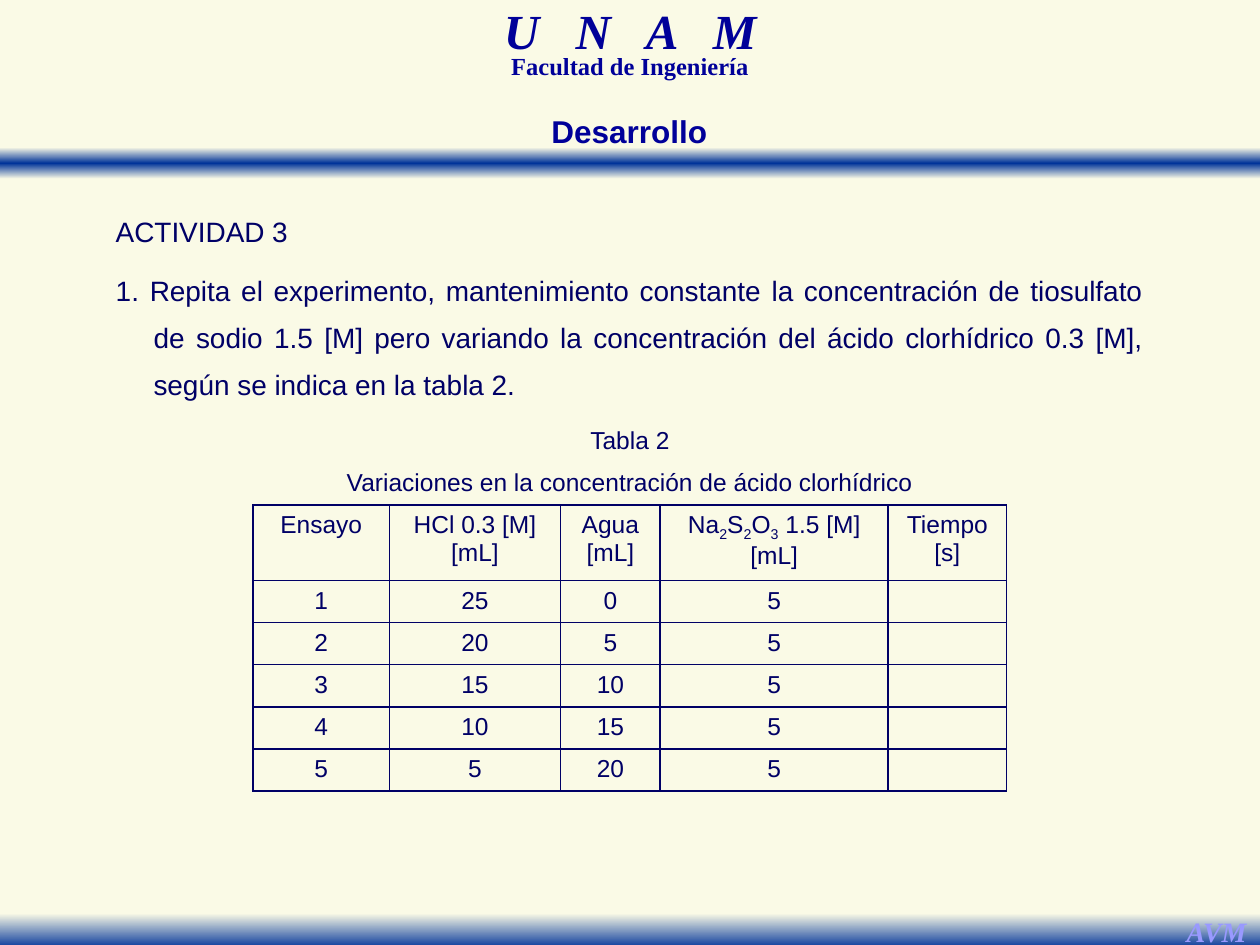
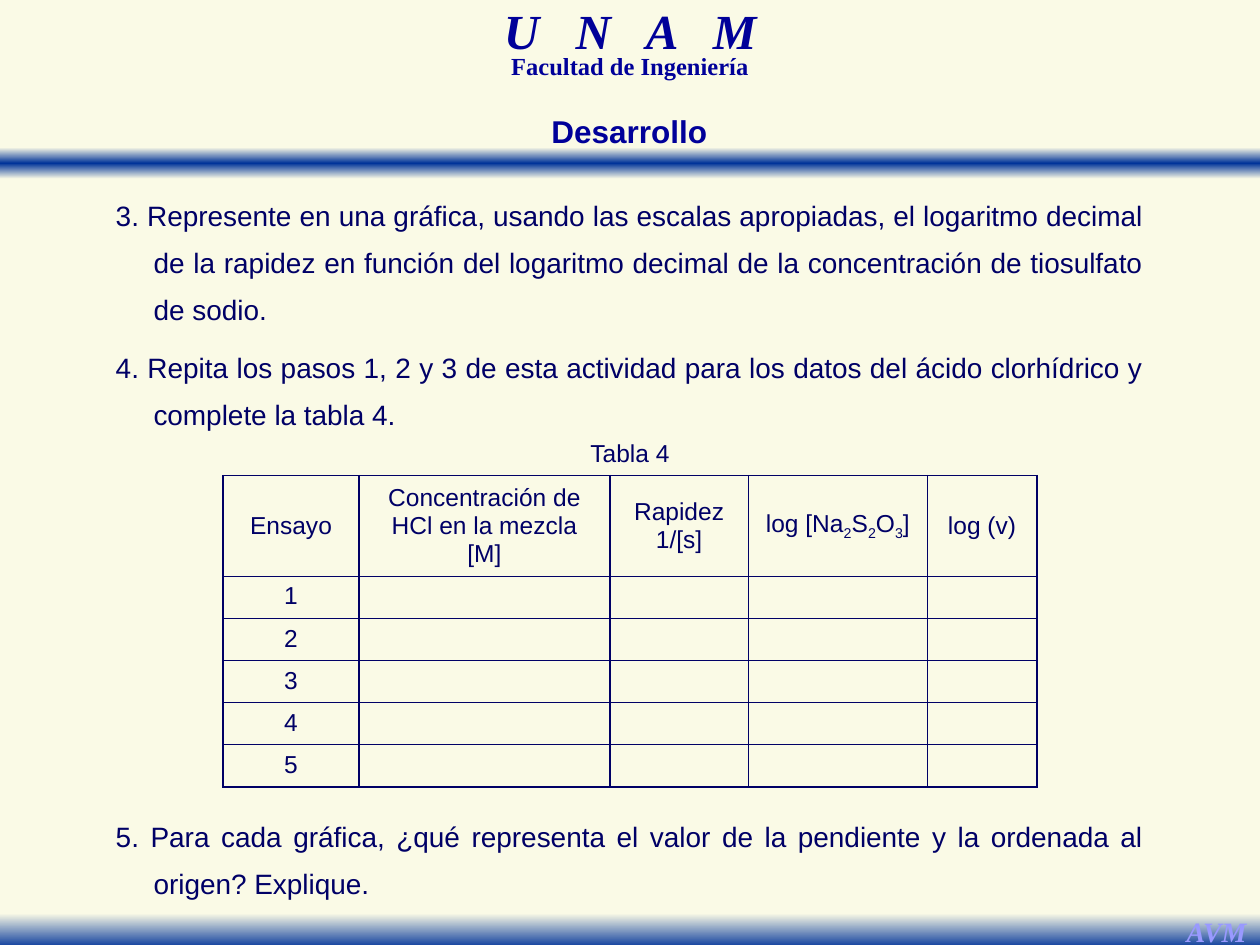
"""Build two slides of a chemistry lab guide on reaction rates."""

from dataclasses import dataclass

from lxml.etree import SubElement
from pptx import Presentation
from pptx.dml.color import RGBColor
from pptx.enum.shapes import MSO_SHAPE
from pptx.enum.text import MSO_ANCHOR, MSO_AUTO_SIZE, PP_ALIGN
from pptx.oxml.ns import qn
from pptx.util import Pt

EMU_PER_PX = 9144


@dataclass(frozen=True)
class Theme:
    cream: str = "FAFAE6"
    band: str = "003399"
    heading: str = "000099"
    ink: str = "000066"
    signature: str = "9999FF"
    sans: str = "Arial"
    serif: str = "Times New Roman"
    school_size: int = 28
    title_size: int = 18
    body_size: int = 16
    small_size: int = 14
    border: int = 1


THEME = Theme()


@dataclass(frozen=True)
class Box:
    left: int
    top: int
    width: int
    height: int

    def emu(self) -> tuple:
        return tuple(px(n) for n in (self.left, self.top, self.width, self.height))


@dataclass(frozen=True)
class TextStyle:
    size: int
    color: str
    font: str = THEME.sans
    bold: bool = False
    italic: bool = False
    align: PP_ALIGN = PP_ALIGN.CENTER
    line_spacing: float = 1.0
    space_after: float = 0


@dataclass(frozen=True)
class Label:
    box: Box
    text: str
    style: TextStyle
    wrap: bool = True
    tracking: int = 0


@dataclass(frozen=True)
class Band:
    box: Box
    stops: tuple


@dataclass(frozen=True)
class Steps:
    box: Box
    items: tuple


@dataclass(frozen=True)
class TrialTable:
    left: int
    top: int
    widths: tuple
    captions: tuple
    headers: tuple
    trials: tuple
    header_height: int
    header_anchor: MSO_ANCHOR
    row_height: int = 33


BODY = TextStyle(THEME.body_size, THEME.ink, align=PP_ALIGN.JUSTIFY,
                 line_spacing=1.4, space_after=6.4)
CELL = TextStyle(THEME.small_size, THEME.ink)
HANGING = 30

BANDS = (
    Band(Box(0, 117, 1000, 25),
         ((0, THEME.cream), (50, THEME.band), (100, THEME.cream))),
    Band(Box(0, 725, 1000, 28), ((0, THEME.cream), (100, THEME.band))),
)
LABELS = (
    Label(Box(304, 8, 392, 43), "U N A M",
          TextStyle(THEME.school_size, THEME.heading, THEME.serif, True, True,
                    line_spacing=0.7), tracking=700),
    Label(Box(321, 42, 358, 26), "Facultad de Ingeniería",
          TextStyle(THEME.small_size, THEME.heading, THEME.serif, True,
                    line_spacing=0.7)),
    Label(Box(931, 721, 69, 37), "AVM",
          TextStyle(THEME.body_size, THEME.signature, THEME.serif, True, True),
          wrap=False),
    Label(Box(283, 84, 433, 40), "Desarrollo",
          TextStyle(THEME.title_size, THEME.heading, bold=True)),
)

SLIDES = (
    (
        Steps(Box(82, 155, 835, 172), (
            "ACTIVIDAD 3",
            "1. Repita el experimento, mantenimiento constante la concentración "
            "de tiosulfato de sodio 1.5 [M] pero variando la concentración del "
            "ácido clorhídrico 0.3 [M], según se indica en la tabla 2.",
        )),
        TrialTable(
            201, 334, (108, 136, 79, 181, 94),
            ("Tabla 2", "Variaciones en la concentración de ácido clorhídrico"),
            ("Ensayo", "HCl 0.3 [M]\n[mL]", "Agua\n[mL]",
             "Na_2S_2O_3 1.5 [M]\n[mL]", "Tiempo\n[s]"),
            tuple((str(n), str(30 - 5 * n), str(5 * n - 5), "5", "")
                  for n in range(1, 6)),
            60, MSO_ANCHOR.TOP),
    ),
    (
        Steps(Box(82, 142, 835, 205), (
            "3. Represente en una gráfica, usando las escalas apropiadas, el "
            "logaritmo decimal de la rapidez en función del logaritmo decimal "
            "de la concentración de tiosulfato de sodio.",
            "4. Repita los pasos 1, 2 y 3 de esta actividad para los datos del "
            "ácido clorhídrico y complete la tabla 4.",
        )),
        TrialTable(
            177, 344, (108, 199, 110, 142, 87), ("Tabla 4",),
            ("Ensayo", "Concentración de HCl en la mezcla\n[M]",
             "Rapidez\n1/[s]", "log [Na_2S_2O_3]", "log (v)"),
            tuple((str(n), "", "", "", "") for n in range(1, 6)),
            80, MSO_ANCHOR.MIDDLE),
        Steps(Box(82, 635, 835, 81), (
            "5. Para cada gráfica, ¿qué representa el valor de la pendiente y "
            "la ordenada al origen? Explique.",
        )),
    ),
)


def px(length: int) -> int:
    """Turn px into EMU."""
    return length * EMU_PER_PX


def add_color(parent, color: str) -> None:
    """Append an RGB colour element."""
    SubElement(parent, qn("a:srgbClr"), val=color)


def style_paragraph(paragraph, style: TextStyle) -> None:
    """Apply a text style to a whole paragraph."""
    paragraph.alignment = style.align
    paragraph.line_spacing = style.line_spacing
    paragraph.space_after = Pt(style.space_after)
    font = paragraph.font
    font.name, font.size = style.font, Pt(style.size)
    font.bold, font.italic = style.bold, style.italic
    font.color.rgb = RGBColor.from_string(style.color)


def add_text_frame(slide, box: Box, wrap: bool = True):
    """Add a text box that fits its text and return its frame."""
    frame = slide.shapes.add_textbox(*box.emu()).text_frame
    frame.word_wrap = wrap
    frame.auto_size = MSO_AUTO_SIZE.SHAPE_TO_FIT_TEXT
    return frame


def draw_label(slide, label: Label) -> None:
    """Draw a one-line label, with its letters spread when tracked."""
    paragraph = add_text_frame(slide, label.box, label.wrap).paragraphs[0]
    if label.tracking:
        spread = paragraph.add_run()
        spread.text = label.text[:-1]
        spread._r.get_or_add_rPr().set("spc", str(label.tracking))
        paragraph.add_run().text = label.text[-1]
    else:
        paragraph.add_run().text = label.text
    style_paragraph(paragraph, label.style)


def draw_band(slide, band: Band) -> None:
    """Draw a rectangle with a vertical gradient."""
    shape = slide.shapes.add_shape(MSO_SHAPE.RECTANGLE, *band.box.emu())
    shape.shadow.inherit = False
    shape.line.fill.background()
    shape.fill.gradient()
    gradient = shape._element.spPr.find(qn("a:gradFill"))
    stops = gradient.find(qn("a:gsLst"))
    for stop in list(stops):
        stops.remove(stop)
    for position, color in band.stops:
        add_color(SubElement(stops, qn("a:gs"), pos=str(position * 1000)), color)
    direction = gradient.find(qn("a:lin"))
    direction.set("ang", "5400000")
    direction.set("scaled", "0")


def draw_steps(slide, steps: Steps) -> None:
    """Draw justified paragraphs, with numbered ones hanging."""
    frame = add_text_frame(slide, steps.box)
    for index, text in enumerate(steps.items):
        paragraph = frame.add_paragraph() if index else frame.paragraphs[0]
        paragraph.add_run().text = text
        if text[0].isdigit():
            properties = paragraph._p.get_or_add_pPr()
            properties.set("marL", str(px(HANGING)))
            properties.set("indent", str(-px(HANGING)))
        style_paragraph(paragraph, BODY)


def write_formula(paragraph, text: str) -> None:
    """Write text in which an underscore lowers the next character."""
    head, *tails = text.split("_")
    pieces = [(head, False)]
    for tail in tails:
        pieces += [(tail[0], True), (tail[1:], False)]
    for piece, lowered in pieces:
        if piece:
            run = paragraph.add_run()
            run.text = piece
            if lowered:
                run._r.get_or_add_rPr().set("baseline", "-25000")


def style_cell(cell, text: str, edges: str, anchor: MSO_ANCHOR) -> None:
    """Fill a cell and rule the edges named among L, R, T and B."""
    properties = cell._tc.get_or_add_tcPr()
    for edge in "LRTB":
        line = SubElement(properties, qn(f"a:ln{edge}"), w=str(Pt(THEME.border)))
        if edge in edges:
            add_color(SubElement(line, qn("a:solidFill")), THEME.ink)
        else:
            SubElement(line, qn("a:noFill"))
    cell.fill.solid()
    cell.fill.fore_color.rgb = RGBColor.from_string(THEME.cream)
    cell.vertical_anchor = anchor
    for index, line_text in enumerate(text.split("\n")):
        frame = cell.text_frame
        paragraph = frame.add_paragraph() if index else frame.paragraphs[0]
        write_formula(paragraph, line_text)
        style_paragraph(paragraph, CELL)
        if not line_text:
            ending = paragraph._p.get_or_add_endParaRPr()
            ending.set("sz", str(CELL.size * 100))


def draw_table(slide, trial_table: TrialTable) -> None:
    """Draw captions, headers and trials as one table."""
    columns = len(trial_table.widths)
    captions = len(trial_table.captions)
    blanks = ("",) * (columns - 1)
    rows = [(caption, *blanks) for caption in trial_table.captions]
    rows += [trial_table.headers, *trial_table.trials]
    heights = [trial_table.row_height] * len(rows)
    heights[captions] = trial_table.header_height
    box = Box(trial_table.left, trial_table.top,
              sum(trial_table.widths), sum(heights))
    table = slide.shapes.add_table(len(rows), columns, *box.emu()).table
    table.first_row = table.horz_banding = False
    for column, width in zip(table.columns, trial_table.widths):
        column.width = px(width)
    for index, (texts, height) in enumerate(zip(rows, heights)):
        table.rows[index].height = px(height)
        if index < captions:
            table.cell(index, 0).merge(table.cell(index, columns - 1))
            edges = "B" if index == captions - 1 else ""
        else:
            edges = "LRTB"
        anchor = trial_table.header_anchor if index == captions else MSO_ANCHOR.TOP
        for column, text in enumerate(texts):
            style_cell(table.cell(index, column), text, edges, anchor)


def main() -> None:
    """Build and save the presentation."""
    presentation = Presentation()
    presentation.slide_width, presentation.slide_height = px(1000), px(750)
    painters = {Steps: draw_steps, TrialTable: draw_table}
    for contents in SLIDES:
        slide = presentation.slides.add_slide(presentation.slide_layouts[6])
        slide.background.fill.solid()
        slide.background.fill.fore_color.rgb = RGBColor.from_string(THEME.cream)
        for band in BANDS:
            draw_band(slide, band)
        for label in LABELS:
            draw_label(slide, label)
        for content in contents:
            painters[type(content)](slide, content)
    presentation.save("out.pptx")


if __name__ == "__main__":
    main()
